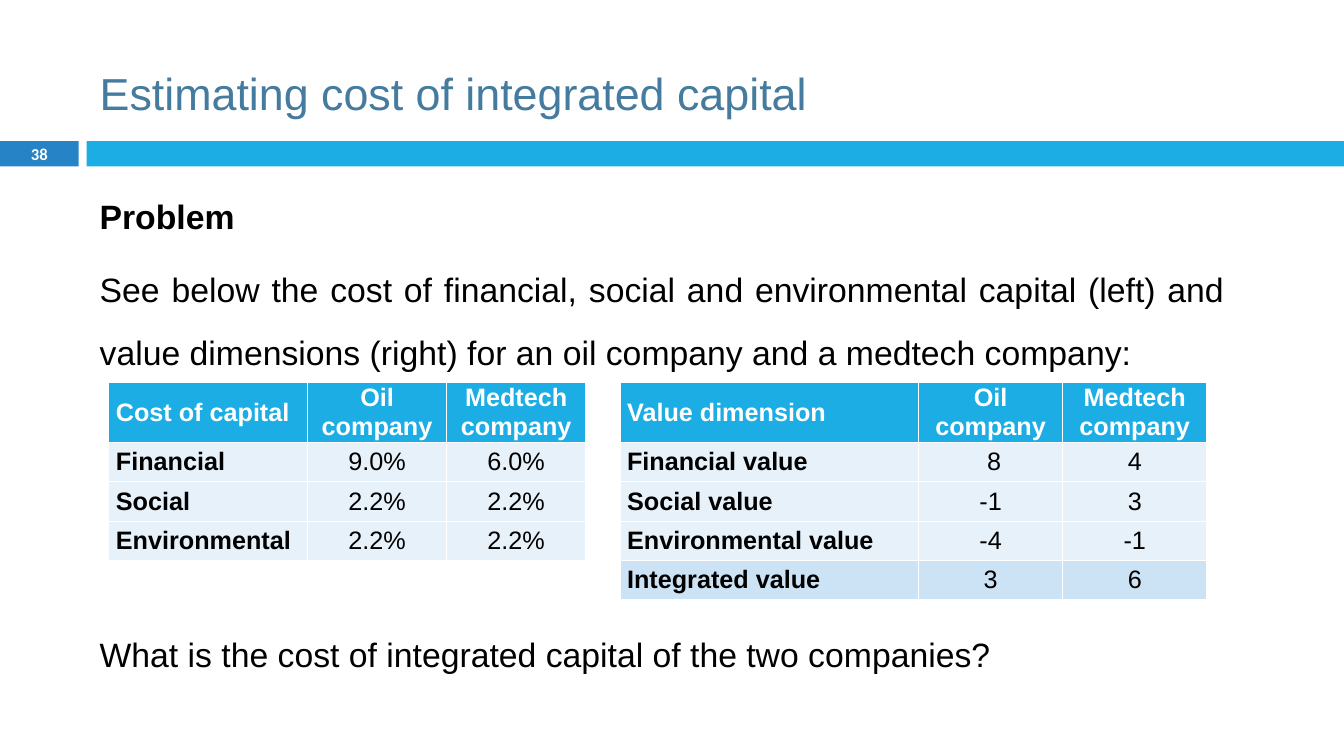
from dataclasses import dataclass

from pptx import Presentation
from pptx.dml.color import RGBColor
from pptx.enum.shapes import MSO_SHAPE
from pptx.enum.text import MSO_ANCHOR as Anchor, PP_ALIGN as Align
from pptx.slide import Slide
from pptx.util import Inches, Pt

WHITE = RGBColor(0xFF, 0xFF, 0xFF)
BLACK = RGBColor(0x00, 0x00, 0x00)
TITLE_BLUE = RGBColor(0x45, 0x7B, 0x9E)
NUMBER_BLUE = RGBColor(0x26, 0x83, 0xC6)
BAR_BLUE = RGBColor(0x1C, 0xAD, 0xE4)
ROW_BLUE = RGBColor(0xE7, 0xF1, 0xFA)
TOTAL_BLUE = RGBColor(0xCC, 0xE3, 0xF5)

TABLE_TOP = 3.79
HEADER_HEIGHT = 0.5
ROW_HEIGHT = 0.39


@dataclass
class Bar:
    left: float
    width: float
    color: RGBColor


@dataclass
class TextBlock:
    left: float
    top: float
    width: float
    height: float
    lines: list[str]
    size: float
    color: RGBColor = BLACK
    font: str = "Arial"
    align: Align = Align.JUSTIFY
    anchor: Anchor = Anchor.TOP
    spacing: float = 1.57
    bold_first: bool = False


@dataclass
class FigureTable:
    left: float
    label_width: float
    value_width: float
    rows: list[tuple[str, str, str]]
    value_space: float
    has_total: bool = False


BARS = [Bar(0, 0.78, NUMBER_BLUE), Bar(0.86, 12.47, BAR_BLUE)]

TEXT_BLOCKS = [
    TextBlock(0.89, 0.25, 11.89, 1.08, ["Estimating cost of integrated capital"], 32,
              TITLE_BLUE, align=Align.LEFT, anchor=Anchor.MIDDLE, spacing=1.5),
    TextBlock(0, 1.39, 0.78, 0.27, ["38"], 11.9, WHITE, "Calibri", Align.CENTER,
              Anchor.MIDDLE, 1, True),
    TextBlock(0.89, 1.66, 11.36, 2.1, [
        "Problem",
        "See below the cost of financial, social and environmental capital (left) "
        "and value dimensions (right) for an oil company and a medtech company:",
    ], 24.1, bold_first=True),
    TextBlock(0.89, 6.01, 11.36, 0.8,
              ["What is the cost of integrated capital of the two companies?"], 24.1),
]

TABLES = [
    FigureTable(6.15, 2.96, 1.43, [
        ("Value dimension", "Oil company", "Medtech company"),
        ("Financial value", " 8", "4"),
        ("Social value", "-1", "3"),
        ("Environmental value", "-4", "-1"),
        ("Integrated value", "3", "6"),
    ], 2, True),
    FigureTable(1.08, 1.97, 1.38, [
        ("Cost of capital", "Oil company", "Medtech company"),
        ("Financial", "9.0%", "6.0%"),
        ("Social", "2.2%", "2.2%"),
        ("Environmental", "2.2%", "2.2%"),
    ], 0),
]


def draw_bar(slide: Slide, bar: Bar) -> None:
    shape = slide.shapes.add_shape(
        MSO_SHAPE.RECTANGLE, Inches(bar.left), Inches(1.4), Inches(bar.width), Inches(0.25))
    shape.shadow.inherit = False
    shape.fill.solid()
    shape.fill.fore_color.rgb = bar.color
    shape.line.fill.background()


def draw_text(slide: Slide, block: TextBlock) -> None:
    box = slide.shapes.add_textbox(
        Inches(block.left), Inches(block.top), Inches(block.width), Inches(block.height))
    frame = box.text_frame
    frame.word_wrap = True
    frame.vertical_anchor = block.anchor
    frame.text = "\n".join(block.lines)
    for index, paragraph in enumerate(frame.paragraphs):
        paragraph.alignment = block.align
        paragraph.line_spacing = block.spacing
        paragraph.space_before = Pt(7 if index else 0)
        paragraph.font.name = block.font
        paragraph.font.size = Pt(block.size)
        paragraph.font.color.rgb = block.color
        paragraph.font.bold = block.bold_first and index == 0


def draw_table(slide: Slide, figures: FigureTable) -> None:
    widths = [figures.label_width, figures.value_width, figures.value_width]
    last = len(figures.rows) - 1
    heights = [HEADER_HEIGHT] + [ROW_HEIGHT] * last
    table = slide.shapes.add_table(
        len(heights), len(widths), Inches(figures.left), Inches(TABLE_TOP),
        Inches(sum(widths)), Inches(sum(heights))).table
    for column, width in zip(table.columns, widths):
        column.width = Inches(width)
    for row_index, (height, texts) in enumerate(zip(heights, figures.rows)):
        table.rows[row_index].height = Inches(height)
        is_header = row_index == 0
        is_total = figures.has_total and row_index == last
        for column_index, text in enumerate(texts):
            is_label = column_index == 0
            cell = table.cell(row_index, column_index)
            cell.fill.solid()
            cell.fill.fore_color.rgb = (
                BAR_BLUE if is_header else TOTAL_BLUE if is_total else ROW_BLUE)
            cell.vertical_anchor = Anchor.MIDDLE
            cell.margin_left = cell.margin_right = Inches(0.07)
            cell.margin_top = cell.margin_bottom = 0
            cell.text = text
            paragraph = cell.text_frame.paragraphs[0]
            paragraph.alignment = Align.LEFT if is_label else Align.CENTER
            space = 3 if is_header else 2 if is_label else figures.value_space
            paragraph.space_before = paragraph.space_after = Pt(space)
            paragraph.font.name = "Arial"
            paragraph.font.size = Pt(18)
            paragraph.font.bold = is_header or is_label
            paragraph.font.color.rgb = WHITE if is_header else BLACK
    table.first_row = table.horz_banding = False


def main() -> None:
    presentation = Presentation()
    presentation.slide_width = Inches(13.33)
    presentation.slide_height = Inches(7.5)
    slide = presentation.slides.add_slide(presentation.slide_layouts[6])
    for bar in BARS:
        draw_bar(slide, bar)
    for block in TEXT_BLOCKS:
        draw_text(slide, block)
    for figures in TABLES:
        draw_table(slide, figures)
    presentation.save("out.pptx")


if __name__ == "__main__":
    main()
